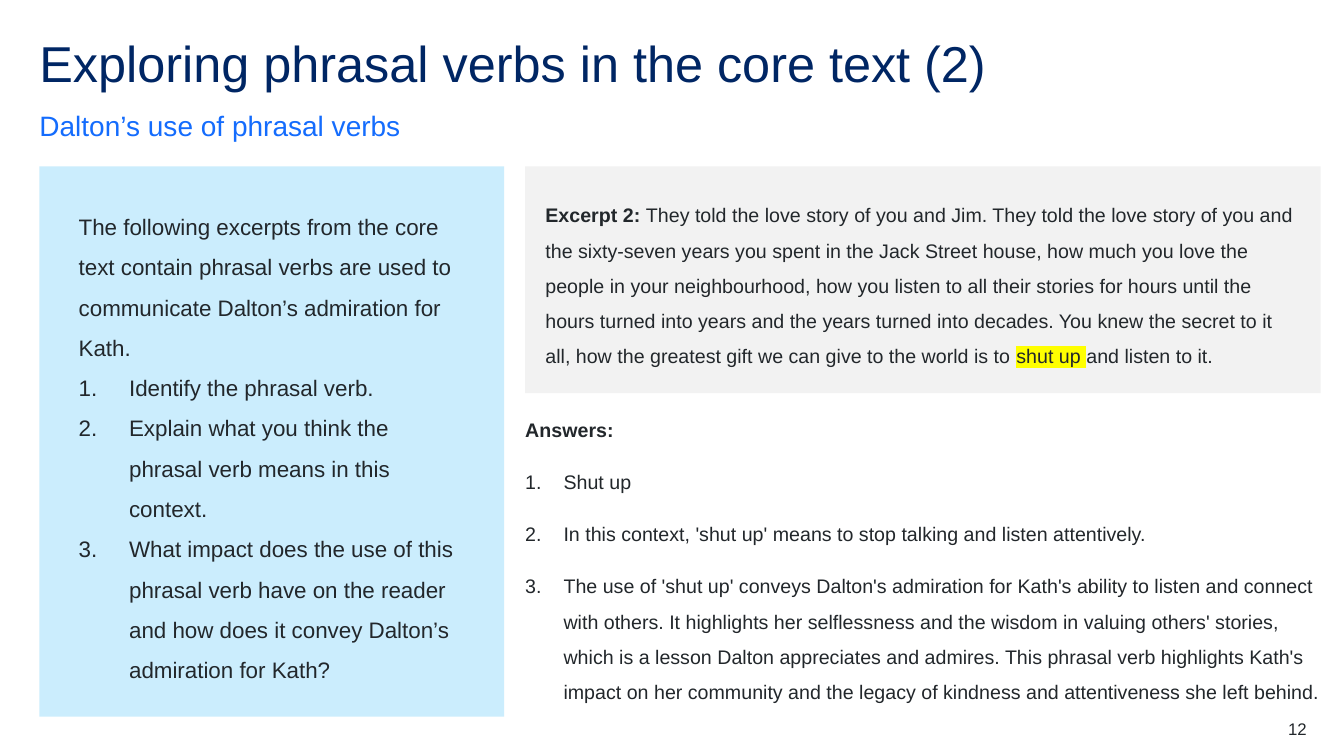
from lxml.etree import SubElement
from pptx import Presentation
from pptx.dml.color import RGBColor as RGB
from pptx.enum.shapes import MSO_SHAPE as SHAPE
from pptx.enum.text import MSO_ANCHOR as ANCHOR, PP_ALIGN as ALIGN
from pptx.oxml.ns import qn
from pptx.util import Inches, Pt

NAVY = RGB(0x00, 0x26, 0x64)
BLUE = RGB(0x14, 0x6C, 0xFD)
INK = RGB(0x22, 0x27, 0x2B)
SKY = RGB(0xCB, 0xED, 0xFD)
GREY = RGB(0xF2, 0xF2, 0xF2)
YELLOW = RGB(0xFF, 0xFF, 0x00)

LEFT, RIGHT = 2.93, 39.08
FULL_W, TASK_W, TEXT_W = 94.22, 34.58, 59.19
PANEL_TOP = 22

TASK = "The following excerpts from the core text contain phrasal verbs are used to communicate Dalton’s admiration for Kath."
QUESTIONS = [
    "Identify the phrasal verb.",
    "Explain what you think the phrasal verb means in this context.",
    "What impact does the use of this phrasal verb have on the reader and how does it convey Dalton’s admiration for Kath?",
]
EXCERPT = (
    "They told the love story of you and Jim. They told the love story of you and the sixty-seven years you spent "
    "in the Jack Street house, how much you love the people in your neighbourhood, how you listen to all their "
    "stories for hours until the hours turned into years and the years turned into decades. You knew the secret to "
    "it all, how the greatest gift we can give to the world is to "
)
ANSWERS = [
    "Shut up",
    "In this context, 'shut up' means to stop talking and listen attentively.",
    "The use of 'shut up' conveys Dalton's admiration for Kath's ability to listen and connect with others. It "
    "highlights her selflessness and the wisdom in valuing others' stories, which is a lesson Dalton appreciates "
    "and admires. This phrasal verb highlights Kath's impact on her community and the legacy of kindness and "
    "attentiveness she left behind.",
]


class Deck:
    font = "Arial"

    def __init__(self):
        self.prs = Presentation()
        self.prs.slide_width, self.prs.slide_height = Inches(13.33), Inches(7.5)
        self.slide = self.prs.slides.add_slide(self.prs.slide_layouts[6])

    def place(self, x, y, w, h):
        col, row = self.prs.slide_width / 100, self.prs.slide_height / 100
        return int(x * col), int(y * row), int(w * col), int(h * row)

    def panel(self, box, fill, inset_x, inset_y=0):
        sp = self.slide.shapes.add_shape(SHAPE.RECTANGLE, *self.place(*box))
        sp.shadow.inherit = False
        sp.fill.solid()
        sp.fill.fore_color.rgb = fill
        sp.line.fill.background()
        return self.frame(sp, ANCHOR.MIDDLE, inset_x, inset_y)

    def text(self, box, anchor=ANCHOR.TOP):
        return self.frame(self.slide.shapes.add_textbox(*self.place(*box)), anchor)

    def frame(self, sp, anchor, inset_x=0, inset_y=0):
        tf = sp.text_frame
        fmt = {
            "word_wrap": True, "vertical_anchor": anchor,
            "margin_left": Inches(inset_x), "margin_right": Inches(inset_x),
            "margin_top": Inches(inset_y), "margin_bottom": Inches(inset_y),
        }
        for name, value in fmt.items():
            setattr(tf, name, value)
        return tf

    def para(self, tf, runs, size, color=INK, spacing=1.5, after=0, align=ALIGN.LEFT, indent=0):
        p = tf.paragraphs[0]
        if p.runs:
            p = tf.add_paragraph()
        fmt = {"alignment": align, "line_spacing": spacing, "space_before": Pt(0), "space_after": Pt(after)}
        for name, value in fmt.items():
            setattr(p, name, value)
        if indent:
            self.number(p, Inches(indent))
        for content, bold, mark in runs:
            r = p.add_run()
            r.text = content
            for name, value in {"name": self.font, "size": Pt(size), "bold": bold}.items():
                setattr(r.font, name, value)
            r.font.color.rgb = color
            if mark:
                self.highlight(r, mark)

    def number(self, p, indent):
        pPr = p._p.get_or_add_pPr()
        pPr.set("marL", str(indent))
        pPr.set("indent", str(-indent))
        SubElement(pPr, qn("a:buFont")).set("typeface", self.font)
        SubElement(pPr, qn("a:buAutoNum")).set("type", "arabicPeriod")

    def highlight(self, r, color):
        rPr = r.font._element
        mark = SubElement(rPr, qn("a:highlight"))
        SubElement(mark, qn("a:srgbClr")).set("val", str(color))
        rPr.find(qn("a:solidFill")).addnext(mark)


def plain(content):
    return [(content, False, None)]


def bold(content):
    return [(content, True, None)]


def main():
    s = Deck()
    tf = s.text((LEFT, 5.2, FULL_W, 8))
    s.para(tf, plain("Exploring phrasal verbs in the core text (2)"), 36, NAVY, 0.9)
    tf = s.text((LEFT, 14.27, FULL_W, 4.53), ANCHOR.BOTTOM)
    s.para(tf, plain("Dalton’s use of phrasal verbs"), 20, BLUE, after=12)

    tf = s.panel((LEFT, PANEL_TOP, TASK_W, 72.8), SKY, 0.39, 0.05)
    s.para(tf, plain(TASK), 16)
    for question in QUESTIONS:
        s.para(tf, plain(question), 16, indent=0.5)

    tf = s.panel((RIGHT, PANEL_TOP, TEXT_W, 30), GREY, 0.2)
    marked = [("shut up ", False, YELLOW)]
    s.para(tf, bold("Excerpt 2: ") + plain(EXCERPT) + marked + plain("and listen to it."), 14, after=12)

    tf = s.text((RIGHT, 53.73, TEXT_W, 39.6))
    s.para(tf, bold("Answers:"), 14, after=12)
    for answer in ANSWERS:
        s.para(tf, plain(answer), 14, after=12, indent=0.38)

    tf = s.text((91.3, 95.07, 5.93, 2.67))
    s.para(tf, plain("12"), 12, spacing=1, align=ALIGN.RIGHT)
    s.prs.save("out.pptx")


if __name__ == "__main__":
    main()
